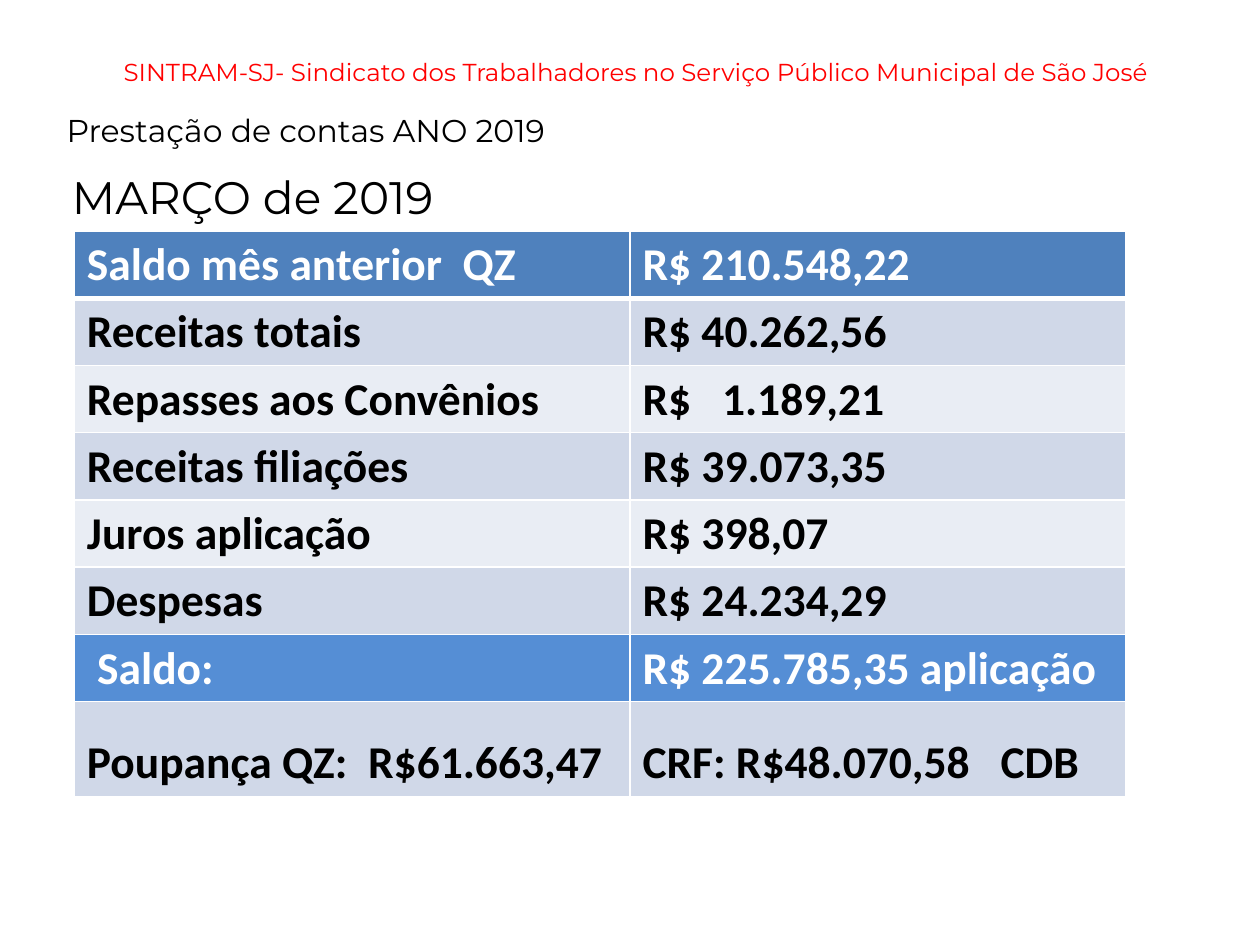
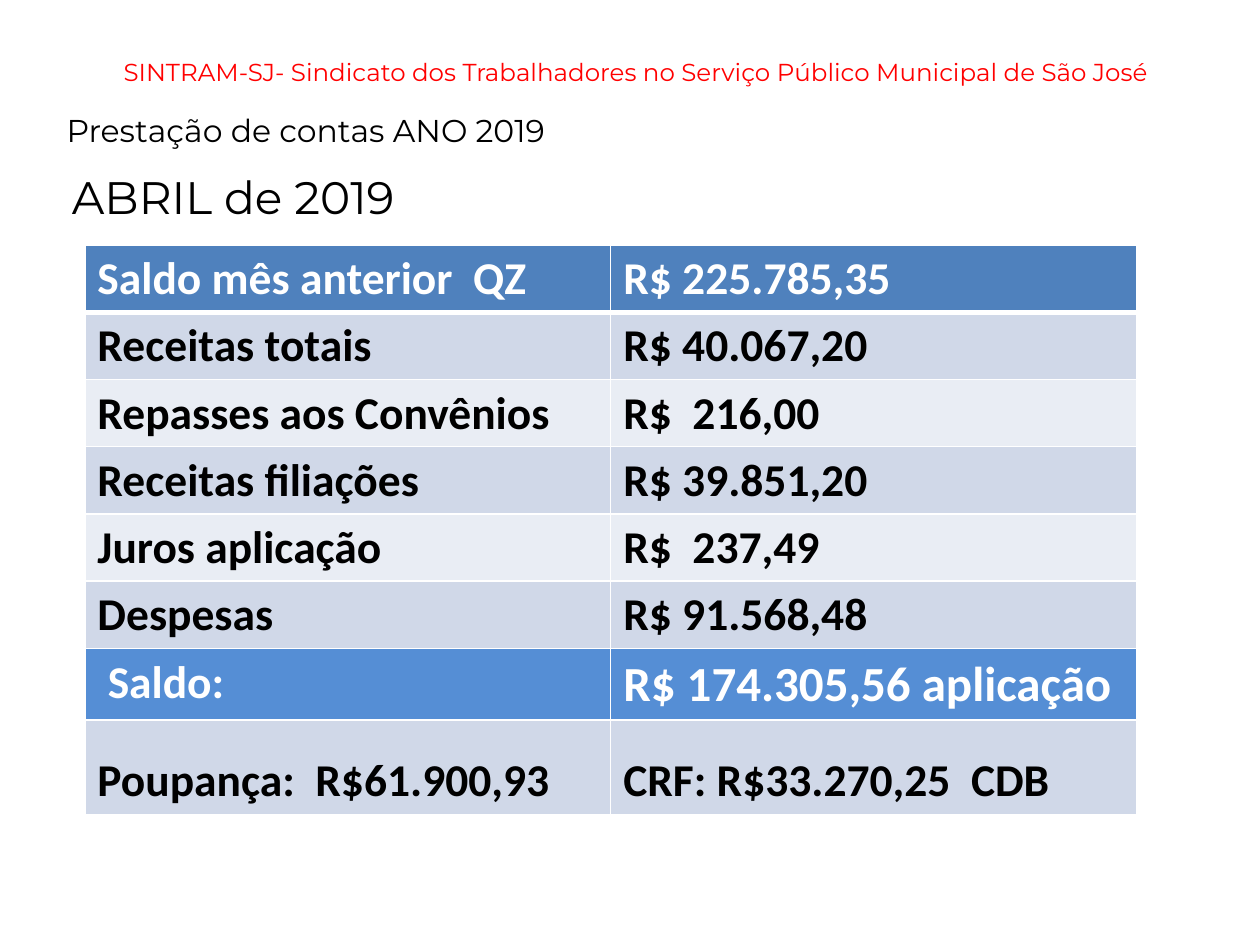
from lxml.etree import SubElement
from pptx import Presentation
from pptx.dml.color import RGBColor
from pptx.enum.text import MSO_ANCHOR as Anchor, PP_ALIGN as Align
from pptx.oxml.ns import qn
from pptx.util import Pt

UNION = "SINTRAM-SJ- Sindicato dos Trabalhadores no Serviço Público Municipal de São José"
REPORT = "Prestação de contas ANO 2019"
LABELS = ["Saldo mês anterior  QZ", "Receitas totais", "Repasses aos Convênios",
          "Receitas filiações", "Juros aplicação", "Despesas", " Saldo:"]
MONTHS = [
    {
        "heading": "MARÇO de 2019",
        "amounts": ["R$ 210.548,22", "R$ 40.262,56", "R$   1.189,21", "R$ 39.073,35",
                    "R$ 398,07", "R$ 24.234,29", "R$ 225.785,35 aplicação"],
        "savings": ("Poupança QZ:  R$61.663,47", "CRF: R$48.070,58   CDB"),
        "corner": (42.5, 132),
        "columns": (317.5, 283.5),
        "balance_size": 26,
    },
    {
        "heading": "ABRIL de 2019",
        "amounts": ["R$ 225.785,35", "R$ 40.067,20", "R$  216,00", "R$ 39.851,20",
                    "R$  237,49", "R$ 91.568,48", "R$ 174.305,56 aplicação"],
        "savings": ("Poupança:  R$61.900,93", "CRF: R$33.270,25  CDB"),
        "corner": (48.5, 140),
        "columns": (300.5, 300.5),
        "balance_size": 28,
    },
]

COLORS = {"union": "FF0000", "ink": "000000", "light": "FFFFFF", "header": "4F81BD",
          "balance": "558ED5", "odd": "D0D8E8", "even": "E9EDF4"}
UNION_FONT = {"name": "Montserrat", "size": Pt(14), "bold": False}
REPORT_FONT = {"name": "Montserrat", "size": Pt(18)}
HEADING_FONT = {"name": "Montserrat", "size": Pt(26)}
CELL_FONT = {"name": "Calibri", "size": Pt(26), "bold": True}
ROW_HEIGHT, SAVINGS_HEIGHT = 38.4, 54.3
BALANCE_ROW = len(LABELS) - 1


def write(frame, text, font_values, color, align=Align.LEFT):
    paragraph = frame.paragraphs[0]
    paragraph.alignment = align
    run = paragraph.add_run()
    run.text = text
    for key, value in font_values.items():
        setattr(run.font, key, value)
    run.font.color.rgb = RGBColor.from_string(COLORS[color])


def add_line_of_text(slide, box, text, font_values):
    frame = slide.shapes.add_textbox(*map(Pt, box)).text_frame
    frame.word_wrap = True
    write(frame, text, font_values, "ink")


def add_borders(cell, is_header):
    """Must run before the cell is filled, as borders precede the fill in the XML."""
    properties = cell._tc.get_or_add_tcPr()
    for side in "LRTB":
        width = 3 if is_header and side == "B" else 1
        line = SubElement(properties, qn(f"a:ln{side}"), w=str(Pt(width)))
        fill = SubElement(line, qn("a:solidFill"))
        SubElement(fill, qn("a:srgbClr"), val=COLORS["light"])


def row_colors(index):
    """Fill and text colour names for a row."""
    if index == 0:
        return "header", "light"
    if index == BALANCE_ROW:
        return "balance", "light"
    return ("odd" if index % 2 else "even"), "ink"


def add_accounts(slide, month):
    rows = [*zip(LABELS, month["amounts"]), month["savings"]]
    heights = [ROW_HEIGHT] * len(LABELS) + [SAVINGS_HEIGHT]
    size = sum(month["columns"]), sum(heights)
    table = slide.shapes.add_table(len(rows), 2, *map(Pt, month["corner"] + size)).table
    for column, width in zip(table.columns, month["columns"]):
        column.width = Pt(width)
    for r, (texts, height) in enumerate(zip(rows, heights)):
        table.rows[r].height = Pt(height)
        fill, ink = row_colors(r)
        for c, text in enumerate(texts):
            cell = table.cell(r, c)
            add_borders(cell, r == 0)
            cell.fill.solid()
            cell.fill.fore_color.rgb = RGBColor.from_string(COLORS[fill])
            cell.vertical_anchor = Anchor.BOTTOM if r > BALANCE_ROW else Anchor.TOP
            font_values = dict(CELL_FONT)
            if (r, c) == (BALANCE_ROW, 1):
                font_values["size"] = Pt(month["balance_size"])
            write(cell.text_frame, text, font_values, ink)


def add_month(deck, month):
    slide = deck.slides.add_slide(deck.slide_layouts[5])
    title = slide.shapes.title
    title.left, title.top, title.width, title.height = map(Pt, (14.5, 9.5, 698, 62.5))
    title.text_frame.vertical_anchor = Anchor.MIDDLE
    write(title.text_frame, UNION, UNION_FONT, "union", Align.CENTER)
    add_line_of_text(slide, (31, 60, 663, 29), REPORT, REPORT_FONT)
    add_accounts(slide, month)
    add_line_of_text(slide, (34, 93, 471, 39), month["heading"], HEADING_FONT)


def main():
    deck = Presentation()
    deck.slide_width, deck.slide_height = Pt(720), Pt(540)
    for month in MONTHS:
        add_month(deck, month)
    deck.save("out.pptx")


if __name__ == "__main__":
    main()
